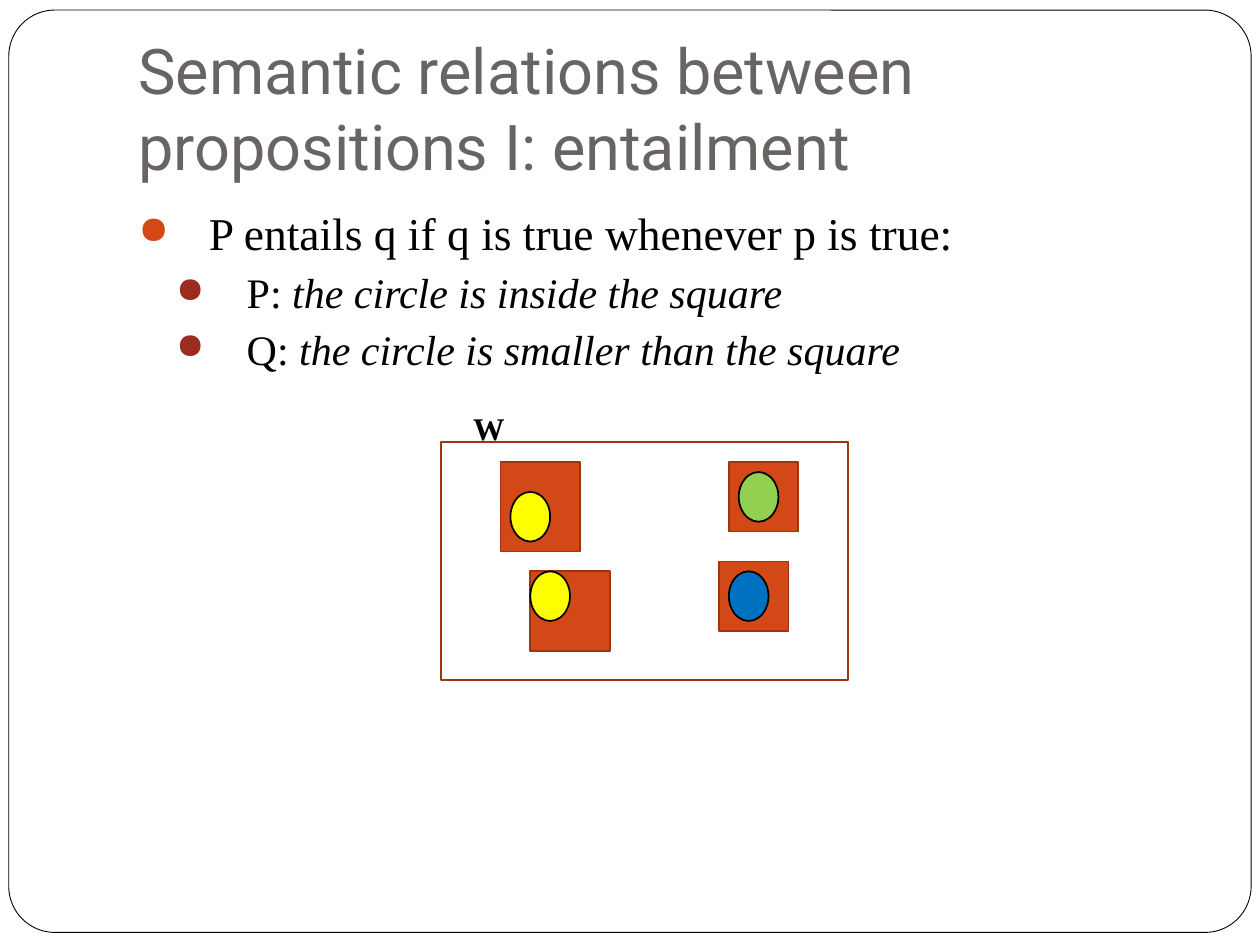
from dataclasses import dataclass

from lxml import etree
from pptx import Presentation
from pptx.dml.color import RGBColor
from pptx.enum.shapes import MSO_SHAPE
from pptx.enum.text import MSO_ANCHOR
from pptx.oxml.ns import qn
from pptx.util import Inches, Pt

RECTANGLE = MSO_SHAPE.RECTANGLE
ELLIPSE = MSO_SHAPE.OVAL
ROUNDED = MSO_SHAPE.ROUNDED_RECTANGLE
TOP, BOTTOM = MSO_ANCHOR.TOP, MSO_ANCHOR.BOTTOM

SERIF, SANS = "Times New Roman", "Roboto"
BLACK, WHITE, GREY = "000000", "FFFFFF", "696464"
ORANGE, RUST, DARK_RED = "D34817", "9C3511", "9B2D1F"
YELLOW, GREEN, BLUE = "FFFF00", "92D050", "0070C0"

# The diagram sits on a grid of 41 columns and 24 rows of square cells
COLUMNS, ROWS = 41, 24
GRID_LEFT, GRID_TOP = 3.5, 3.51
CELL = 3.23 / COLUMNS


@dataclass
class Situation:
    """A square and its circle; places and sizes in grid cells."""
    square: tuple[int, int, int, int]
    circle: tuple[int, int]
    colour: str


@dataclass
class Bullet:
    label: str
    example: str
    size: int
    indent: float
    space: float
    colour: str


SITUATIONS = [
    Situation((6, 2, 8, 9), (7, 5), YELLOW),
    Situation((9, 13, 8, 8), (9, 13), YELLOW),
    Situation((29, 2, 7, 7), (30, 3), GREEN),
    Situation((28, 12, 7, 7), (29, 13), BLUE),
]
BULLETS = [
    Bullet("P entails q if q is true whenever p is true:", "", 26, 0.56, 5.8, ORANGE),
    Bullet("P: ", "the circle is inside the square", 24, 0.86, 3.7, DARK_RED),
    Bullet("Q: ", "the circle is smaller than the square", 24, 0.86, 3.7, DARK_RED),
]


def rgb(colour: str) -> RGBColor:
    return RGBColor.from_string(colour)


def on_grid(column: int, row: int, width: int, height: int) -> tuple:
    return (GRID_LEFT + column * CELL, GRID_TOP + row * CELL,
            width * CELL, height * CELL)


def add_figure(shapes, kind, place: tuple, fill: str | None, line: str,
               weight: float = 1):
    figure = shapes.add_shape(kind, *map(Inches, place))
    figure.shadow.inherit = False
    if fill:
        figure.fill.solid()
        figure.fill.fore_color.rgb = rgb(fill)
    else:
        figure.fill.background()
    figure.line.color.rgb = rgb(line)
    figure.line.width = Pt(weight)
    return figure


def add_frame(shapes, place: tuple, anchor=TOP, wrap: bool = True,
              bottom: float = 0.05):
    frame = shapes.add_textbox(*map(Inches, place)).text_frame
    frame.word_wrap = wrap
    frame.vertical_anchor = anchor
    frame.margin_bottom = Inches(bottom)
    return frame


def add_text(para, text: str, *, size: int, font: str = SERIF,
             colour: str = BLACK, bold: bool = False, italic: bool = False) -> None:
    span = para.add_run()
    span.text = text
    span.font.size = Pt(size)
    span.font.name = font
    span.font.bold = bold
    span.font.italic = italic
    span.font.color.rgb = rgb(colour)


def set_bullet(para, colour: str, indent: float) -> None:
    properties = para._p.get_or_add_pPr()
    properties.set("marL", str(Inches(indent)))
    properties.set("indent", str(Inches(-0.56)))
    bullet_colour = etree.SubElement(properties, qn("a:buClr"))
    etree.SubElement(bullet_colour, qn("a:srgbClr"), val=colour)
    etree.SubElement(properties, qn("a:buSzPct"), val="85000")
    etree.SubElement(properties, qn("a:buChar"), char="●")


def add_bullets(page) -> None:
    frame = add_frame(page.shapes, (1, 1.58, 8.5, 5))
    for number, bullet in enumerate(BULLETS):
        para = frame.add_paragraph() if number else frame.paragraphs[0]
        para.level = 1 if bullet.example else 0
        para.space_before = Pt(bullet.space)
        set_bullet(para, bullet.colour, bullet.indent)
        add_text(para, bullet.label, size=bullet.size)
        if bullet.example:
            add_text(para, bullet.example, size=bullet.size, italic=True)


def add_diagram(page) -> None:
    shapes = page.shapes.add_group_shape().shapes
    for situation in SITUATIONS:
        add_figure(shapes, RECTANGLE, on_grid(*situation.square), ORANGE, RUST)
        add_figure(shapes, ELLIPSE, on_grid(*situation.circle, 4, 5),
                   situation.colour, BLACK)
    add_figure(shapes, RECTANGLE, on_grid(0, 0, COLUMNS, ROWS), None, RUST)
    label = add_frame(shapes, on_grid(2, -4, 5.5, 5), wrap=False)
    add_text(label.paragraphs[0], "W", size=18, bold=True)


def main() -> None:
    deck = Presentation()
    deck.slide_width, deck.slide_height = Inches(10), Inches(7.5)
    page = deck.slides.add_slide(deck.slide_layouts[6])

    # Rounded border of the page
    border = add_figure(page.shapes, ROUNDED, (0.07, 0.08, 9.86, 7.32),
                        WHITE, BLACK, 0.5)
    border.adjustments[0] = 0.05

    # Title
    title = add_frame(page.shapes, (1, 0.3, 8.5, 1.25), BOTTOM, bottom=0.1)
    add_text(title.paragraphs[0],
             "Semantic relations between propositions I: entailment",
             size=36, font=SANS, colour=GREY)

    # Definition and the worlds where it holds
    add_bullets(page)
    add_diagram(page)
    deck.save("out.pptx")


if __name__ == "__main__":
    main()
